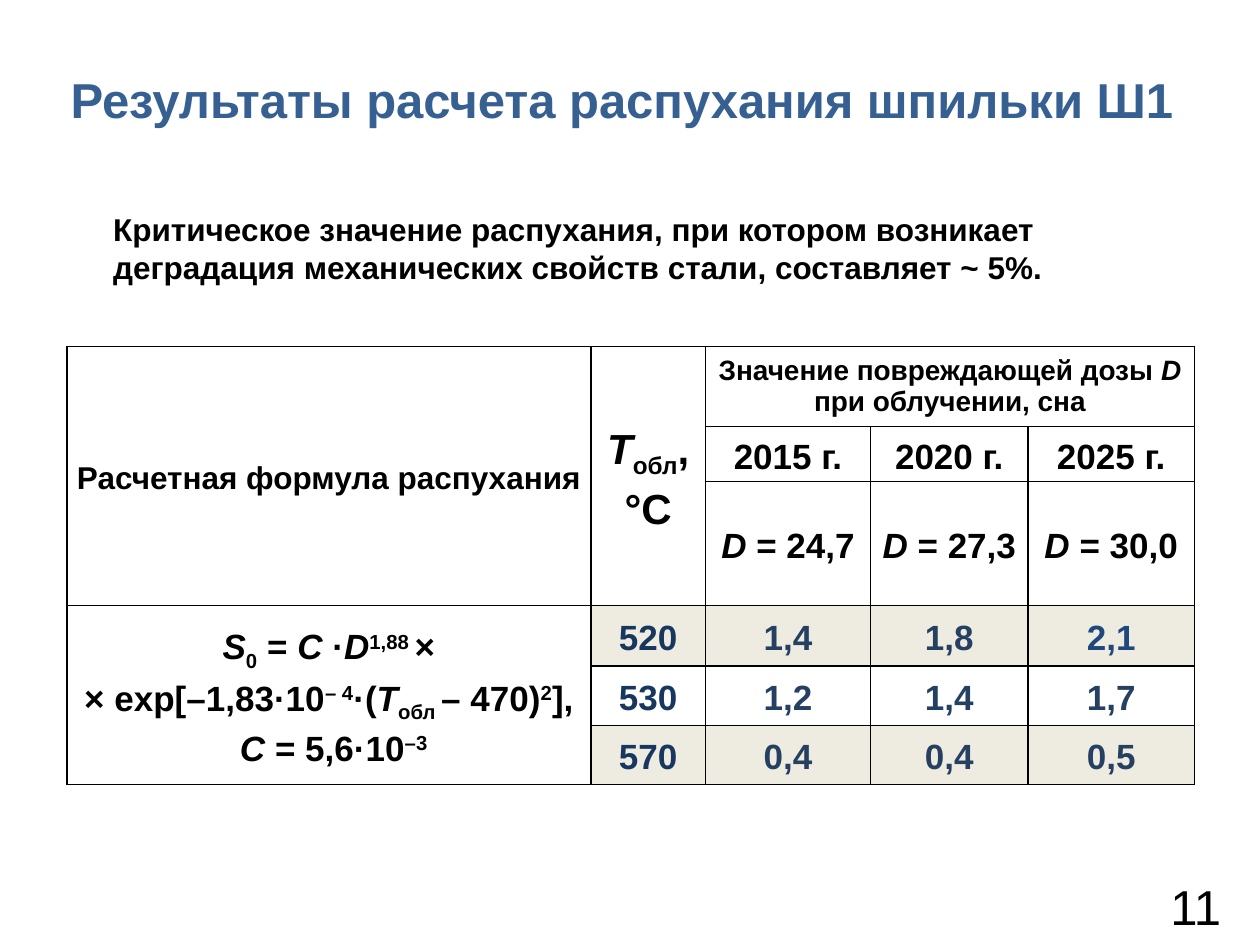
from lxml import etree
from pptx import Presentation
from pptx.dml.color import RGBColor
from pptx.enum.text import MSO_ANCHOR as Anchor, PP_ALIGN as Align
from pptx.oxml.ns import qn
from pptx.util import Inches, Pt

COLORS = {"text": "000000", "title": "376092", "temperature": "17375E",
          "value": "254061", "peak": "1F497D", "band": "EEECE1",
          "plain": "FFFFFF", "border": "000000"}
COLUMNS = [4.16, 0.91, 1.31, 1.25, 1.32]
ROWS = [0.59, 0.44, 0.92, 0.48, 0.47, 0.47]
BASELINES = {"sub": "-25000", "sup": "30000"}

# Each span is (text, style); a newline is a line break
FORMULA = [
    [("S", "italic"), ("0", "sub"), (" = ", ""), ("С ", "italic"), ("·", ""),
     ("D", "italic"), ("1,88 ", "sup"), ("×", ""), ("\n", ""),
     ("× exp[–1,83·10", ""), ("– 4", "sup"), ("·(", ""), ("T", "italic"),
     ("обл ", "sub"), ("– 470)", ""), ("2", "sup"), ("],", "")],
    [(" ", ""), ("C ", "italic"), ("= 5,6·10", ""), ("–3", "sup")],
]
DOSES = [("2015 г.", "24,7"), ("2020 г.", "27,3"), ("2025 г.", "30,0")]
SWELLING = [("520", "1,4", "1,8", "2,1"),
            ("530", "1,2", "1,4", "1,7"),
            ("570", "0,4", "0,4", "0,5")]


def style_font(font, size, color, bold=True):
    font.name = "Arial"
    font.size = Pt(size)
    font.bold = bold
    font.color.rgb = RGBColor.from_string(COLORS[color])


def add_text(page, box, text, size, color="text", bold=True,
             align=Align.LEFT, anchor=Anchor.TOP):
    frame = page.shapes.add_textbox(*map(Inches, box)).text_frame
    frame.word_wrap = True
    frame.vertical_anchor = anchor
    frame.text = text
    para = frame.paragraphs[0]
    para.alignment = align
    style_font(para.runs[0].font, size, color, bold)


def add_borders(cell):
    properties = cell._tc.get_or_add_tcPr()
    for side in ("lnL", "lnR", "lnT", "lnB"):
        line = etree.SubElement(properties, qn(f"a:{side}"), w=str(Pt(1)))
        fill = etree.SubElement(line, qn("a:solidFill"))
        etree.SubElement(fill, qn("a:srgbClr"), val=COLORS["border"])


def fill_cell(cell, paragraphs, size, color="text", spacing=1.15, inset=0.07):
    cell.vertical_anchor = Anchor.MIDDLE
    if inset is not None:
        cell.margin_left = cell.margin_right = Inches(inset)
        cell.margin_top = cell.margin_bottom = 0
    frame = cell.text_frame
    for index, spans in enumerate(paragraphs):
        para = frame.add_paragraph() if index else frame.paragraphs[0]
        para.alignment = Align.CENTER
        para.line_spacing = spacing
        for text, style in spans:
            if text == "\n":
                para.add_line_break()
                continue
            span = para.add_run()
            span.text = text
            style_font(span.font, size, color)
            span.font.italic = style == "italic"
            if style in BASELINES:
                span._r.get_or_add_rPr().set("baseline", BASELINES[style])


def add_swelling_table(page, left, top):
    box = [left, top, sum(COLUMNS), sum(ROWS)]
    table = page.shapes.add_table(len(ROWS), len(COLUMNS), *map(Inches, box)).table
    table.first_row = table.horz_banding = False
    for column, width in zip(table.columns, COLUMNS):
        column.width = Inches(width)
    for row, height in zip(table.rows, ROWS):
        row.height = Inches(height)

    # Grid lines and row shading
    for r in range(len(ROWS)):
        for c in range(len(COLUMNS)):
            cell = table.cell(r, c)
            add_borders(cell)
            shade = "band" if c and r in (3, 5) else "plain"
            cell.fill.solid()
            cell.fill.fore_color.rgb = RGBColor.from_string(COLORS[shade])

    # Merged cells
    for first, last in [((0, 0), (2, 0)), ((0, 1), (2, 1)),
                        ((0, 2), (0, 4)), ((3, 0), (5, 0))]:
        table.cell(*first).merge(table.cell(*last))

    # Headings and formula
    fill_cell(table.cell(0, 0), [[("Расчетная формула распухания", "")]], 18)
    fill_cell(table.cell(0, 1), [[("Т", "italic"), ("обл", "sub"), (", °С", "")]], 24)
    fill_cell(table.cell(0, 2),
              [[("Значение повреждающей дозы ", ""), ("D", "italic"),
                ("\n", ""), ("при облучении, сна", "")]],
              16, spacing=1.0, inset=None)
    fill_cell(table.cell(3, 0), FORMULA, 20, inset=0.06)
    for c, (year, dose) in enumerate(DOSES, start=2):
        fill_cell(table.cell(1, c), [[(year, "")]], 20)
        fill_cell(table.cell(2, c), [[("D", "italic"), (f" = {dose}", "")]], 20)

    # Temperatures and swelling values
    for r, values in enumerate(SWELLING, start=3):
        for c, value in enumerate(values, start=1):
            color = "temperature" if c == 1 else "peak" if value == "2,1" else "value"
            fill_cell(table.cell(r, c), [[(value, "")]], 20, color, inset=0.06)


def main():
    deck = Presentation()
    deck.slide_width, deck.slide_height = Inches(10), Inches(7.5)
    page = deck.slides.add_slide(deck.slide_layouts[6])
    add_text(page, (0.39, 0.37, 9.09, 0.83),
             "Результаты расчета распухания шпильки Ш1", 28, "title",
             align=Align.CENTER, anchor=Anchor.MIDDLE)
    add_text(page, (0.8, 1.62, 8.54, 0.71),
             "Критическое значение распухания, при котором возникает "
             "деградация механических свойств стали, составляет ~ 5%.", 18)
    add_swelling_table(page, 0.53, 2.75)
    add_text(page, (7.54, 6.99, 2.25, 0.4), "11", 28, bold=False,
             align=Align.RIGHT, anchor=Anchor.MIDDLE)
    deck.save("out.pptx")


if __name__ == "__main__":
    main()
